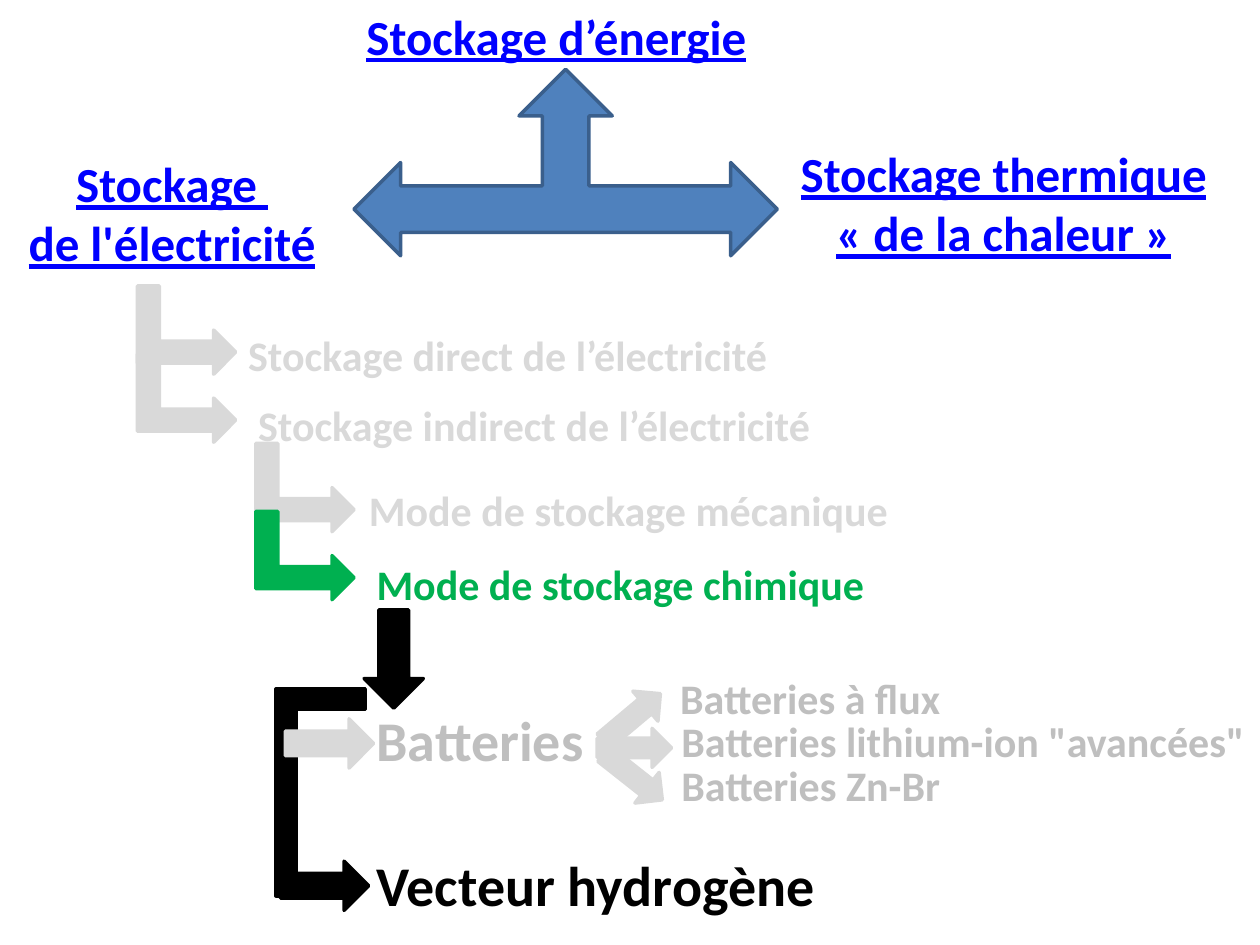
from lxml import etree
from pptx import Presentation
from pptx.dml.color import RGBColor
from pptx.enum import shapes, text
from pptx.util import Inches, Pt

FONT = "Calibri"
BLUE, GREEN, BLACK = "0000FF", "00B050", "000000"
PALE, GREY = "D9D9D9", "BFBFBF"
KIND = shapes.MSO_SHAPE

HEADINGS = [
    (["Stockage d’énergie"], 2.81, 0, 3.28, 0.57, False),
    (["Stockage ", "de l'électricité"], -0.08, 1.17, 2.89, 1.04, True),
    (["Stockage thermique « de la chaleur »"], 6.17, 1.09, 3.59, 1.04, True),
]
LABELS = [
    ("Stockage direct de l’électricité", 1.87, 2.57, 4.61, 24, PALE),
    ("Stockage indirect de l’électricité", 1.95, 3.12, 4.92, 24, PALE),
    ("Mode de stockage mécanique", 2.83, 3.8, 4.43, 24, PALE),
    ("Mode de stockage chimique", 2.89, 4.38, 4.3, 24, GREEN),
    ("Batteries", 2.89, 5.55, 2.03, 32, GREY),
    ("Vecteur hydrogène", 2.89, 6.7, 3.75, 32, BLACK),
    ("Batteries à flux", 5.3, 5.29, 2.34, 24, GREY),
    ("Batteries lithium-ion \"avancées\"", 5.31, 5.63, 4.69, 24, GREY),
    ("Batteries Zn-Br", 5.31, 5.98, 2.58, 24, GREY),
]
LABEL_HEIGHT = {24: 0.5, 32: 0.64}

BRANCHES = [(1.13, 2.23, PALE), (1.13, 2.77, PALE),
            (2.07, 3.48, PALE), (2.07, 4.02, GREEN)]
STEM_PARTS = [
    (KIND.DOWN_ARROW, 2.89, 4.84, 0.47, 0.78),
    (KIND.RECTANGLE, 2.19, 5.47, 0.16, 1.64),
    (KIND.RECTANGLE, 2.27, 5.47, 0.63, 0.16),
]
OPTION_ARROWS = [(2.42, 5.55, PALE), (2.38, 6.68, BLACK)]
BATTERY_ARROWS = [(4.74, 5.78, 180), (4.72, 5.54, 140), (4.73, 6.01, 218.3)]


def colour(value):
    return RGBColor.from_string(value)


def add_solid(page, kind, left, top, width, height, fill, rotation=0, outline=None):
    solid = page.shapes.add_shape(
        kind, Inches(left), Inches(top), Inches(width), Inches(height))
    solid.shadow.inherit = False
    solid.rotation = rotation
    solid.fill.solid()
    solid.fill.fore_color.rgb = colour(fill)
    solid.line.color.rgb = colour(outline or fill)
    solid.line.width = Pt(2)


def add_text(page, lines, left, top, width, height, size, ink,
             centred=False, underlined=False):
    box = page.shapes.add_textbox(
        Inches(left), Inches(top), Inches(width), Inches(height))
    frame = box.text_frame
    frame.word_wrap = True
    frame.text = "\n".join(lines)
    for para in frame.paragraphs:
        para.alignment = text.PP_ALIGN.CENTER if centred else text.PP_ALIGN.LEFT
        for span in para.runs:
            span.font.name = FONT
            span.font.size = Pt(size)
            span.font.bold = True
            span.font.underline = underlined
            span.font.color.rgb = colour(ink)


def main():
    deck = Presentation()
    deck.slide_width, deck.slide_height = Inches(10), Inches(7.5)
    page = deck.slides.add_slide(deck.slide_layouts[6])

    add_solid(page, KIND.LEFT_RIGHT_UP_ARROW, 2.81, 0.55, 3.36, 1.48,
              "4F81BD", outline="3A5F8C")
    for left, top, fill in BRANCHES:
        add_solid(page, KIND.BENT_UP_ARROW, left, top, 0.7, 0.78, fill, 90)
    for kind, *place in STEM_PARTS:
        add_solid(page, kind, *place, BLACK)
    for left, top, fill in OPTION_ARROWS:
        add_solid(page, KIND.UP_ARROW, left, top, 0.39, 0.7, fill, 90)
    for left, top, rotation in BATTERY_ARROWS:
        add_solid(page, KIND.LEFT_ARROW, left, top, 0.59, 0.31, PALE, rotation)

    for lines, left, top, width, height, centred in HEADINGS:
        add_text(page, lines, left, top, width, height, 28, BLUE, centred, True)
    for label, left, top, width, size, ink in LABELS:
        add_text(page, [label], left, top, width, LABEL_HEIGHT[size], size, ink)

    deck.save("out.pptx")


if __name__ == "__main__":
    main()
